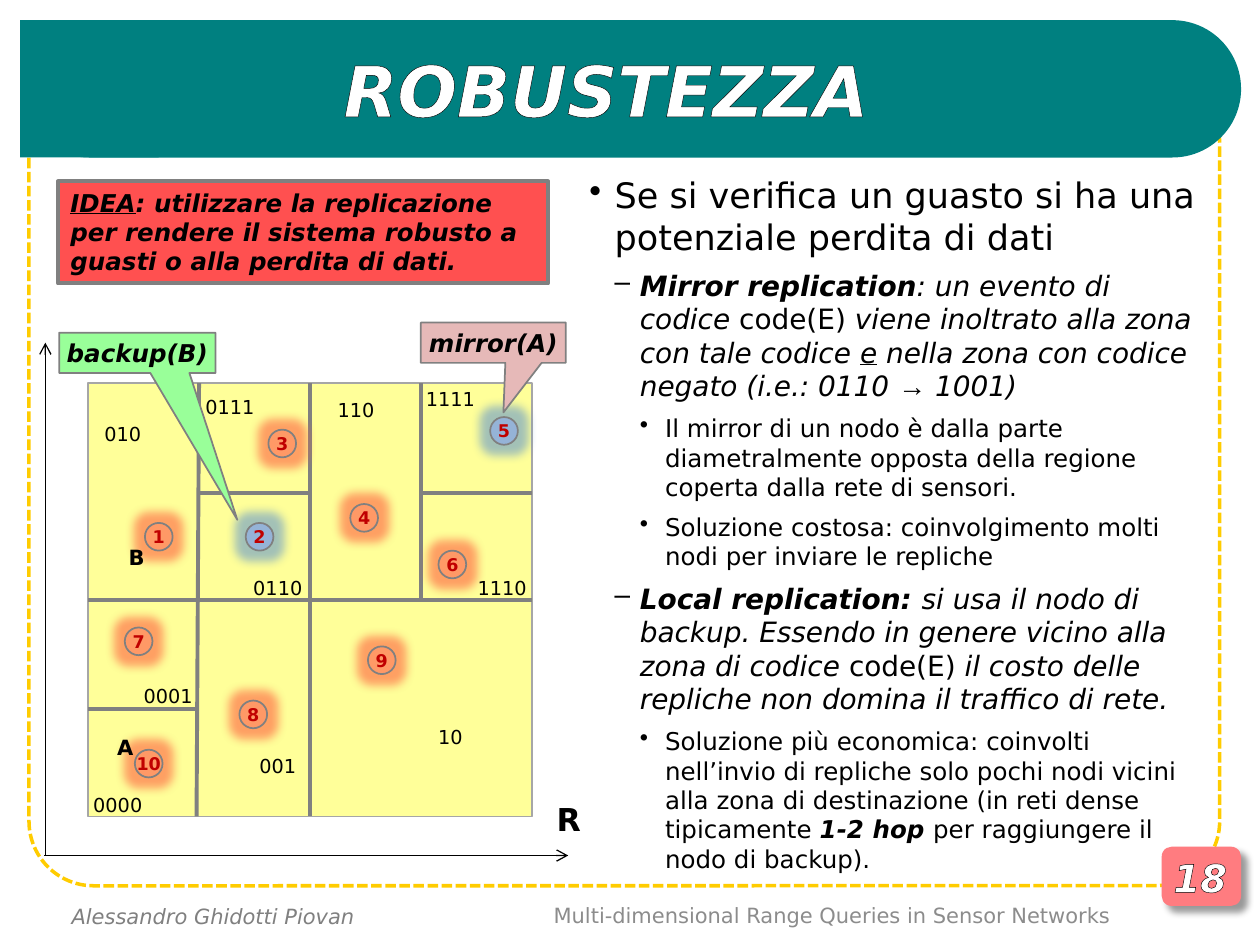
from lxml import etree
from pptx import Presentation
from pptx import util as u
from pptx.dml.color import RGBColor
from pptx.enum import dml, shapes, text
from pptx.oxml import ns

HUE = {
    "white": "FFFFFF", "black": "000000", "gold": "FFCC00", "teal": "008080",
    "pink": "FF7C80", "gray": "808080", "pale": "8C8C8C", "edge": "A6A6A6",
    "yellow": "FFFF99", "orange": "FF9966", "blue": "95B3D7", "deep": "C00000",
    "green": "99FF99", "rose": "E6B9B8", "red": "FF5050",
    "warm": "FF6140", "cool": "6699CC",
}
FONT = "DejaVu Sans"
KIND = shapes.MSO_SHAPE
MID = text.MSO_ANCHOR.MIDDLE
TOP = text.MSO_ANCHOR.TOP
LEFT = text.PP_ALIGN.LEFT
MAP = (0.7, 3.04, 3.52, 3.44)
NODES = [
    ("8", 1.9, 5.56), ("7", 0.99, 4.98), ("9", 2.92, 5.13), ("10", 1.07, 5.95),
    ("4", 2.78, 4), ("6", 3.48, 4.37), ("5", 3.89, 3.31),
    ("3", 2.13, 3.41), ("2", 1.95, 4.15), ("1", 1.15, 4.15),
]
CODES = [
    ("0000", 0.7, 6.29), ("0001", 1.1, 5.43), ("001", 1.97, 5.98),
    ("10", 3.34, 5.75), ("010", 0.74, 3.35), ("0111", 1.59, 3.13),
    ("0110", 1.97, 4.57), ("110", 2.59, 3.16), ("1111", 3.34, 3.07),
    ("1110", 3.75, 4.57),
]
WALLS = [
    (3.34, 3.04, 3.34, 4.77), (4.22, 3.91, 3.34, 3.91),
    (1.58, 3.04, 1.56, 6.48), (2.45, 3.91, 1.57, 3.91),
    (1.58, 5.63, 0.7, 5.63),
]
POINTS = [
    (0, [("Se si verifica un guasto si ha una potenziale perdita di dati", "")]),
    (1, [("Mirror replication", "bi"), (": un evento di codice ", "i"),
         ("code(E)", ""), (" viene inoltrato alla zona con tale codice ", "i"),
         ("e", "iu"), (" nella zona con codice negato (i.e.: 0110 ", "i"),
         ("→", "ia"), (" 1001)", "i")]),
    (2, [("Il mirror di un nodo è dalla parte diametralmente opposta della "
          "regione coperta dalla rete di sensori.", "")]),
    (2, [("Soluzione costosa: coinvolgimento molti nodi per inviare le repliche", "")]),
    (1, [("Local replication: ", "bi"),
         ("si usa il nodo di backup. Essendo in genere vicino alla zona di codice ", "i"),
         ("code(E)", ""),
         (" il costo delle repliche non domina il traffico di rete.", "i")]),
    (2, [("Soluzione più economica: coinvolti nell’invio di repliche solo pochi "
          "nodi vicini alla zona di destinazione (in reti dense tipicamente ", ""),
         ("1-2 hop ", "bi"), ("per raggiungere il nodo di backup).", "")]),
]
LEVELS = [(20, "•"), (16, "–"), (14, "•")]


def tint(name):
    return RGBColor.from_string(HUE[name])


def sub(node, tag, **attrs):
    return etree.SubElement(node, ns.qn("a:" + tag), attrs)


def tone(node, name, alpha):
    color = sub(node, "srgbClr", val=HUE[name])
    sub(color, "alpha", val=str(alpha * 1000))


def write(para, runs, size, hue="black", style="", rim=0):
    if isinstance(runs, str):
        runs = [(runs, style)]
    for words, marks in runs:
        run = para.add_run()
        run.text = words
        font = run.font
        font.name = "Arial" if "a" in marks else FONT
        font.size = u.Pt(size)
        font.bold, font.italic = "b" in marks, "i" in marks
        font.underline = "u" in marks
        font.color.rgb = tint(hue)
        if rim:
            line = etree.Element(ns.qn("a:ln"), w=str(u.Pt(rim)))
            sub(sub(line, "solidFill"), "srgbClr", val=HUE["black"])
            font._element.insert(0, line)


def frame(shape, inset=None, anchor=MID, wrap=True, align=text.PP_ALIGN.CENTER):
    body = shape.text_frame
    body.word_wrap = wrap
    body.vertical_anchor = anchor
    if inset is not None:
        body.margin_left = body.margin_right = u.Inches(inset)
        body.margin_top = body.margin_bottom = u.Inches(inset)
    para = body.paragraphs[0]
    para.alignment = align
    return para


def label(slide, area, words, size, inset=None, anchor=MID, wrap=True,
          align=text.PP_ALIGN.CENTER, **look):
    box = slide.shapes.add_textbox(*map(u.Inches, area))
    write(frame(box, inset, anchor, wrap, align), words, size, **look)


def block(slide, kind, area, fill, line=None, width=1, adj=()):
    shape = slide.shapes.add_shape(kind, *map(u.Inches, area))
    shape.shadow.inherit = False
    shape.fill.solid()
    shape.fill.fore_color.rgb = tint(fill)
    for i, value in enumerate(adj):
        shape.adjustments[i] = value
    if line:
        shape.line.color.rgb = tint(line)
        shape.line.width = u.Pt(width)
    else:
        shape.line.fill.background()
    return shape


def rule(slide, ends, hue="gray", width=2.25, arrow=False):
    line = slide.shapes.add_connector(shapes.MSO_CONNECTOR.STRAIGHT,
                                      *map(u.Inches, ends))
    line.line.color.rgb = tint(hue)
    line.line.width = u.Pt(width)
    if arrow:
        sub(line.line._get_or_add_ln(), "tailEnd", type="arrow")
    sub(line._element.spPr, "effectLst")
    return line


def node(slide, name, x, y):
    cool = name in ("2", "5")
    dot = block(slide, KIND.OVAL, (x, y, 0.22, 0.22),
                "blue" if cool else "orange", "gray")
    effects = dot._element.spPr.find(ns.qn("a:effectLst"))
    glow = sub(effects, "glow", rad=str(u.Pt(11)))
    tone(glow, "cool" if cool else "warm", 60)
    write(frame(dot, 0, wrap=False), name, 10, hue="deep", style="b")


def points(slide):
    box = slide.shapes.add_textbox(*map(u.Inches, (4.58, 1.33, 5.11, 5.54)))
    para = frame(box, anchor=TOP, align=LEFT)
    for i, (level, runs) in enumerate(POINTS):
        if i:
            para = box.text_frame.add_paragraph()
        size, mark = LEVELS[level]
        para.level = level
        para.space_after = u.Pt(6)
        props = para._p.get_or_add_pPr()
        props.set("marL", str(u.Inches(0.2 * (level + 1))))
        props.set("indent", str(u.Inches(-0.2)))
        sub(props, "buChar", char=mark)
        write(para, runs, size)


def decor(slide):
    block(slide, KIND.RECTANGLE, (0.16, 0.16, 1.1, 1.09), "teal")
    block(slide, KIND.ROUNDED_RECTANGLE, (0.16, 0.16, 9.69, 1.09), "teal", adj=[0.5])
    label(slide, (0.31, 0.16, 9, 1.09), "ROBUSTEZZA", 40, hue="white", style="bi", rim=1)
    badge = block(slide, KIND.ROUNDED_RECTANGLE, (9.22, 6.72, 0.63, 0.47), "pink")
    effects = badge._element.spPr.find(ns.qn("a:effectLst"))
    shade = sub(effects, "outerShdw", blurRad=str(u.Pt(4)), dist=str(u.Pt(5)),
                dir=str(45 * 60000), algn="tl", rotWithShape="0")
    tone(shade, "black", 40)
    label(slide, (9.22, 6.72, 0.61, 0.48), "18", 22, inset=0, hue="white",
          style="bi", rim=0.75)
    label(slide, (4.22, 7.11, 4.77, 0.31),
          "Multi-dimensional Range Queries in Sensor Networks", 12, hue="pale")
    label(slide, (0.47, 7.12, 2.47, 0.3), "Alessandro Ghidotti Piovan", 12,
          anchor=TOP, wrap=False, align=LEFT, hue="gray", style="i")


def zones(slide):
    for ends in [(0.36, 6.79, 0.36, 2.72), (0.35, 6.79, 4.51, 6.79)]:
        rule(slide, ends, "black", 0.75, arrow=True)
    area = block(slide, KIND.RECTANGLE, MAP, "yellow", "edge")
    label(slide, (4.32, 6.3, 0.32, 0.4), "R", 18, anchor=TOP, style="b")
    for item in NODES[:4]:
        node(slide, *item)
    for start, end in [(0, 2), (1, 3)]:
        line = rule(slide, (0, 0, 0, 0))
        line.begin_connect(area, start)
        line.end_connect(area, end)
    for ends in WALLS:
        rule(slide, ends)
    for item in NODES[4:]:
        node(slide, *item)
    for code, x, y in CODES:
        label(slide, (x, y, 0.47, 0.19), code, 11, inset=0)
    for name, x, y in [("B", 0.85, 4.32), ("A", 0.76, 5.83)]:
        label(slide, (x, y, 0.47, 0.2), name, 12, inset=0, style="b")


def notes(slide):
    for words, area, fill, adj in [
            ("backup(B)", (0.47, 2.64, 1.24, 0.32), "green", (0.64, 4.14)),
            ("mirror(A)", (3.34, 2.56, 1.15, 0.32), "rose", (0.07, 1.73))]:
        call = block(slide, KIND.RECTANGULAR_CALLOUT, area, fill, "gray", adj=adj)
        write(frame(call, 0.04, wrap=False), words, 14, style="bi")
    idea = block(slide, KIND.RECTANGLE, (0.46, 1.44, 3.89, 0.81), "red", "gray", 2.25)
    write(frame(idea, anchor=TOP, align=LEFT),
          [("IDEA", "biu"), (": utilizzare la replicazione per rendere il sistema "
                             "robusto a guasti o alla perdita di dati.", "bi")], 14)


def main():
    deck = Presentation()
    deck.slide_width, deck.slide_height = u.Inches(10), u.Inches(7.5)
    slide = deck.slides.add_slide(deck.slide_layouts[6])
    edge = block(slide, KIND.ROUNDED_RECTANGLE, (0.23, 0.62, 9.45, 6.41),
                 "white", "gold", 2, [0.08])
    edge.line.dash_style = dml.MSO_LINE.SQUARE_DOT
    points(slide)
    decor(slide)
    zones(slide)
    notes(slide)
    deck.save("out.pptx")


if __name__ == "__main__":
    main()
